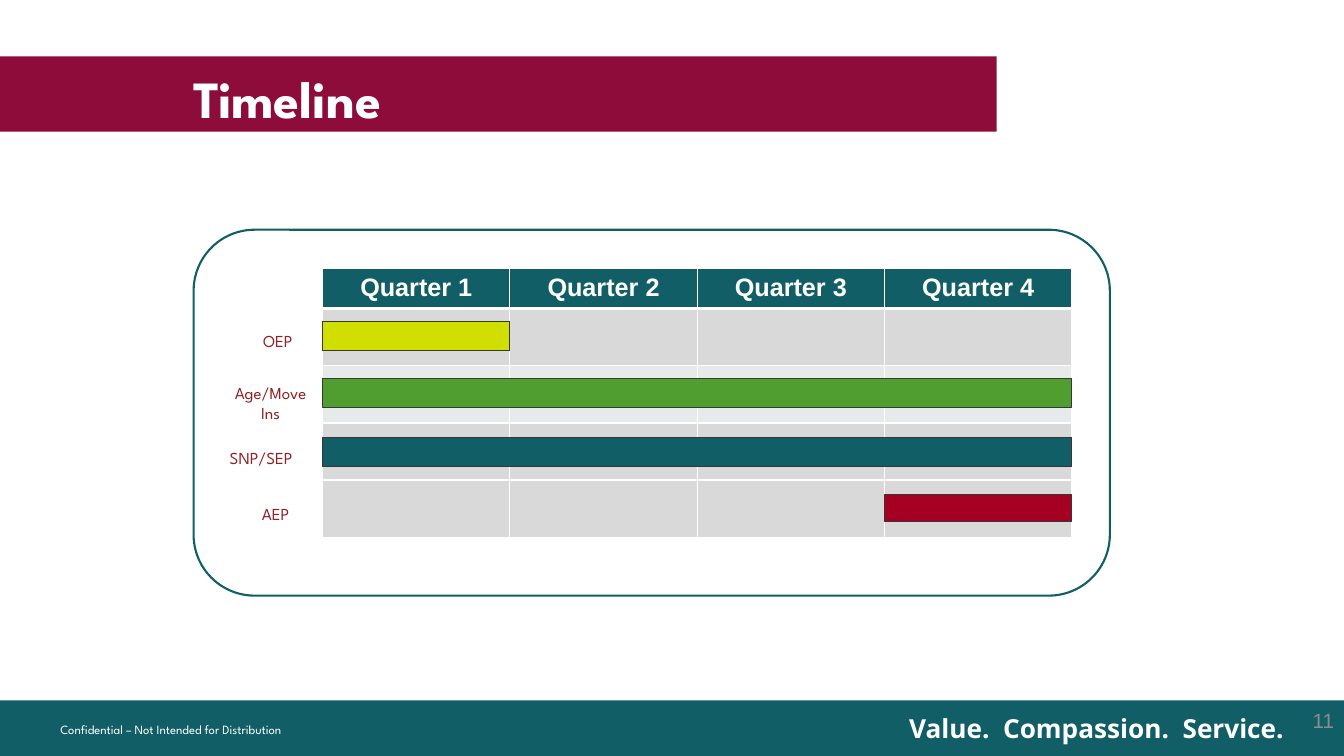
from lxml.etree import SubElement
from pptx import Presentation
from pptx.dml.color import RGBColor
from pptx.enum.shapes import MSO_SHAPE as SHAPE
from pptx.enum.text import MSO_ANCHOR as ANCHOR, PP_ALIGN as ALIGN
from pptx.oxml.ns import qn
from pptx.util import Cm, Pt

SPARTAN = "League Spartan"
TEAL, WHITE = "115E67", "FFFFFF"
QUARTERS = ["Quarter 1", "Quarter 2", "Quarter 3", "Quarter 4"]
ROW_FILLS = ["D9D9D9", "E7EAEB", "D9D9D9", "D9D9D9"]
HEADER_H, ROW_H = 0.99, 1.44
# name, label box, alignment, first quarter, quarters, bar offset, bar height, fill
PERIODS = [
    ("OEP", (1.5, 0.92, 1.63, 0.76), ALIGN.LEFT, 0, 1, 0.35, 0.74, "D0DF00"),
    ("Age/Move Ins", (0.76, 2.22, 2.36, 1.27), ALIGN.CENTER, 0, 4, 0.34, 0.74, "509E2F"),
    ("SNP/SEP", (0.66, 3.87, 2.36, 0.76), ALIGN.LEFT, 0, 4, 0.39, 0.74, TEAL),
    ("AEP", (1.47, 5.27, 1.63, 0.76), ALIGN.LEFT, 3, 1, 0.38, 0.69, "A50021"),
]


def rgb(value):
    return RGBColor.from_string(value)


def write(tf, text, size, color, font=SPARTAN, bold=False, align=ALIGN.LEFT,
          anchor=ANCHOR.TOP, insets=(0.25, 0.13)):
    tf.word_wrap = True
    tf.vertical_anchor = anchor
    tf.margin_left = tf.margin_right = Cm(insets[0])
    tf.margin_top = tf.margin_bottom = Cm(insets[1])
    p = tf.paragraphs[0]
    p.alignment = align
    r = p.add_run()
    r.text = text
    r.font.size, r.font.bold, r.font.name = Pt(size), bold, font
    r.font.color.rgb = rgb(color)


def add_text(s, box, text, size, color, **fmt):
    tb = s.shapes.add_textbox(*map(Cm, box))
    write(tb.text_frame, text, size, color, **fmt)


def add_box(s, box, fill=None, line=None, width=0.75, kind=SHAPE.RECTANGLE):
    sp = s.shapes.add_shape(kind, *map(Cm, box))
    sp.shadow.inherit = False
    if fill:
        sp.fill.solid()
        sp.fill.fore_color.rgb = rgb(fill)
    else:
        sp.fill.background()
    if line:
        sp.line.color.rgb = rgb(line)
        sp.line.width = Pt(width)
    else:
        sp.line.fill.background()


def style_cell(cell, fill, top=1, bottom=1):
    tcPr = cell._tc.get_or_add_tcPr()
    for side, width in (("L", 1), ("R", 1), ("T", top), ("B", bottom)):
        ln = SubElement(tcPr, qn(f"a:ln{side}"), w=str(Pt(width)))
        SubElement(SubElement(ln, qn("a:solidFill")), qn("a:srgbClr"), val=WHITE)
    cell.fill.solid()
    cell.fill.fore_color.rgb = rgb(fill)


def add_header(s, x, y, w, h):
    add_box(s, (x, y, w, h), "8D0C39")
    add_text(s, (x + 4.88, y + 0.26, 18.92, 1.42), "Timeline", 37.3, WHITE,
             bold=True, insets=(0, 0))


def add_footer(s, x, y, w, h):
    add_box(s, (x, y, w, h), TEAL)
    add_text(s, (x + w - 11.29, y + 0.13, 11.29, 1.17), "Value.\u00a0 Compassion.\u00a0 Service."
             .replace("\u00a0", " "), 18.7, WHITE, font="Open Sans", bold=True,
             insets=(0.33, 0.18))
    add_text(s, (x + 1.27, y + 0.41, 8.81, 0.64),
             "Confidential – Not Intended for Distribution", 9, WHITE)
    add_text(s, (x + w - 7.9, y, 7.9, 1.02), "11", 14.7, "8C8C8C", font="Arial",
             align=ALIGN.RIGHT, anchor=ANCHOR.MIDDLE)


def add_quarter_grid(s, x, y, w, h):
    frame = s.shapes.add_table(len(PERIODS) + 1, len(QUARTERS), *map(Cm, (x, y, w, h)))
    table = frame.table
    table.first_row = table.horz_banding = False
    for i, row in enumerate(table.rows):
        row.height = Cm(ROW_H if i else HEADER_H)
    for j, quarter in enumerate(QUARTERS):
        table.columns[j].width = Cm(w / len(QUARTERS))
        head = table.cell(0, j)
        style_cell(head, TEAL, bottom=3)
        write(head.text_frame, quarter, 18, WHITE, font="Arial", bold=True,
              align=ALIGN.CENTER)
        for i, fill in enumerate(ROW_FILLS, 1):
            style_cell(table.cell(i, j), fill, top=3 if i == 1 else 1)


def add_timeline(s, x, y, w, h):
    add_box(s, (x, y, w, h), line=TEAL, width=1.5, kind=SHAPE.ROUNDED_RECTANGLE)
    grid_x, grid_y, grid_w = x + 3.25, y + 0.97, 18.88
    grid_h = HEADER_H + ROW_H * len(PERIODS)
    add_quarter_grid(s, grid_x, grid_y, grid_w, grid_h)
    quarter_w = grid_w / len(QUARTERS)
    for i, (name, label, align, first, count, offset, bar_h, fill) in enumerate(PERIODS):
        dx, dy, label_w, label_h = label
        add_text(s, (x + dx, y + 1.5 + dy, label_w, label_h), name, 12, "902025",
                 align=align)
        bar_y = grid_y + HEADER_H + i * ROW_H + offset
        add_box(s, (grid_x + first * quarter_w, bar_y, count * quarter_w, bar_h),
                fill, "373737")


def main():
    prs = Presentation()
    prs.slide_width, prs.slide_height = Cm(33.87), Cm(19.05)
    s = prs.slides.add_slide(prs.slide_layouts[6])
    add_header(s, 0, 1.42, 25.12, 1.9)
    add_footer(s, 0, 17.65, 33.87, 1.4)
    add_timeline(s, 4.88, 5.79, 23.09, 9.22)
    prs.save("out.pptx")


if __name__ == "__main__":
    main()
